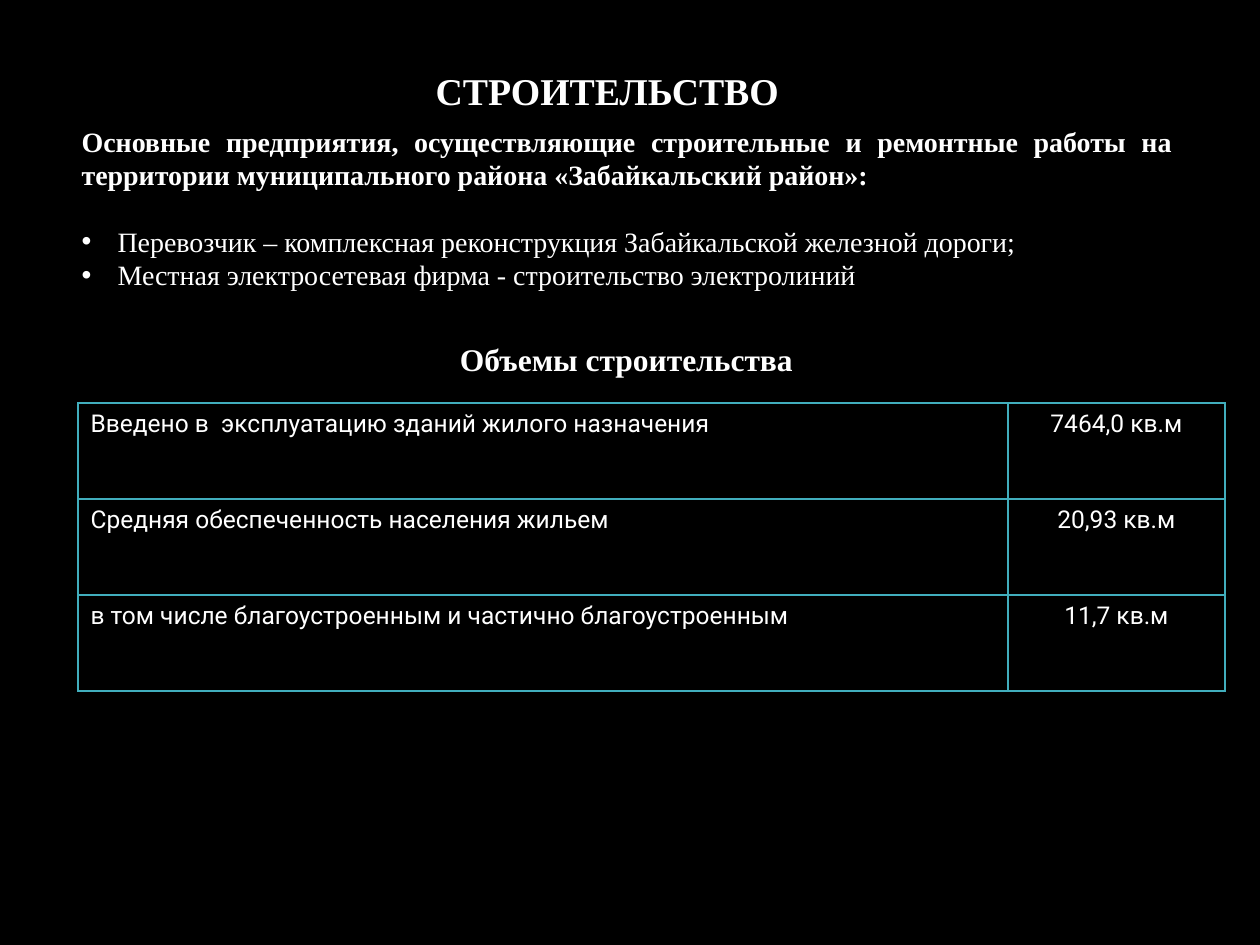
import pptx
import pptx.dml.color
import pptx.enum.text
import pptx.oxml
import pptx.oxml.ns
import pptx.util

EMU_PER_PX = 914400 / 126
COLORS = {"background": "000000", "text": "FFFFFF", "border": "41AEBD"}
ALIGN = pptx.enum.text.PP_ALIGN
ANCHOR = pptx.enum.text.MSO_ANCHOR


def px(length):
    return pptx.util.Emu(round(length * EMU_PER_PX))


def write(paragraph, text, align, size, bold=False, font="Times New Roman"):
    paragraph.alignment = align
    run = paragraph.add_run()
    run.text = text
    for attribute, value in {"name": font, "size": pptx.util.Pt(size), "bold": bold}.items():
        setattr(run.font, attribute, value)
    run.font.color.rgb = pptx.dml.color.RGBColor.from_string(COLORS["text"])


deck = pptx.Presentation()
deck.slide_width, deck.slide_height = px(1260), px(945)
slide = deck.slides.add_slide(deck.slide_layouts[1])
slide.background.fill.solid()
slide.background.fill.fore_color.rgb = pptx.dml.color.RGBColor.from_string(COLORS["background"])

# Text areas
title = slide.shapes.title
companies = slide.placeholders[1]
volumes_heading = slide.shapes.add_textbox(0, 0, 0, 0)
places = (
    (title, (423, 69, 486, 49), ANCHOR.MIDDLE),
    (companies, (69, 118, 1116, 217), ANCHOR.TOP),
    (volumes_heading, (164, 334, 925, 50), ANCHOR.TOP),
)
for area, box, anchor in places:
    area.left, area.top, area.width, area.height = map(px, box)
    frame_format = {
        "word_wrap": True,
        "auto_size": pptx.enum.text.MSO_AUTO_SIZE.NONE,
        "vertical_anchor": anchor,
    }
    for attribute, value in frame_format.items():
        setattr(area.text_frame, attribute, value)

# Title and table heading
title_line = title.text_frame.paragraphs[0]
title_line.line_spacing = 0.9
write(title_line, "СТРОИТЕЛЬСТВО", ALIGN.LEFT, 21.6, True)
write(volumes_heading.text_frame.paragraphs[0], "Объемы строительства", ALIGN.CENTER, 18, True)

# Introduction and bulleted companies: text, bold, indent, space before
company_lines = (
    ("Основные предприятия, осуществляющие строительные и ремонтные работы на "
     "территории муниципального района «Забайкальский район»:", True, 0, 0),
    ("Перевозчик – комплексная реконструкция Забайкальской железной дороги;", False, 36, 19),
    ("Местная электросетевая фирма - строительство электролиний", False, 36, 0),
)
for index, (text, bold, indent, gap) in enumerate(company_lines):
    frame = companies.text_frame
    paragraph = frame.add_paragraph() if index else frame.paragraphs[0]
    properties = paragraph._p.get_or_add_pPr()
    properties.set("marL", str(px(indent)))
    properties.set("indent", str(-px(indent)))
    bullet = '<a:buChar %s char="•"/>' if indent else "<a:buNone %s/>"
    properties.append(pptx.oxml.parse_xml(bullet % pptx.oxml.ns.nsdecls("a")))
    paragraph.line_spacing = pptx.util.Pt(19.1)
    paragraph.space_before = pptx.util.Pt(gap)
    write(paragraph, text, ALIGN.JUSTIFY, 16, bold)

# Construction volumes
volumes = (
    ("Введено в  эксплуатацию зданий жилого назначения", "7464,0 кв.м"),
    ("Средняя обеспеченность населения жильем", "20,93 кв.м"),
    ("в том числе благоустроенным и частично благоустроенным", "11,7 кв.м"),
)
column_widths = (930, 217)
row_height = 96
table = slide.shapes.add_table(
    len(volumes), len(column_widths), px(78), px(403),
    px(sum(column_widths)), px(row_height * len(volumes)),
).table
table.first_row = table.horz_banding = False
for column, width in zip(table.columns, column_widths):
    column.width = px(width)
for row, values in zip(table.rows, volumes):
    row.height = px(row_height)
    for cell, value, align in zip(row.cells, values, (ALIGN.LEFT, ALIGN.CENTER)):
        write(cell.text_frame.paragraphs[0], value, align, 14, font="Roboto")
        cell.fill.background()
        for index, side in enumerate(("lnL", "lnR", "lnT", "lnB")):
            border = pptx.oxml.parse_xml(
                f'<a:{side} {pptx.oxml.ns.nsdecls("a")} w="{pptx.util.Pt(1)}"><a:solidFill>'
                f'<a:srgbClr val="{COLORS["border"]}"/></a:solidFill></a:{side}>'
            )
            cell._tc.get_or_add_tcPr().insert(index, border)

deck.save("out.pptx")
